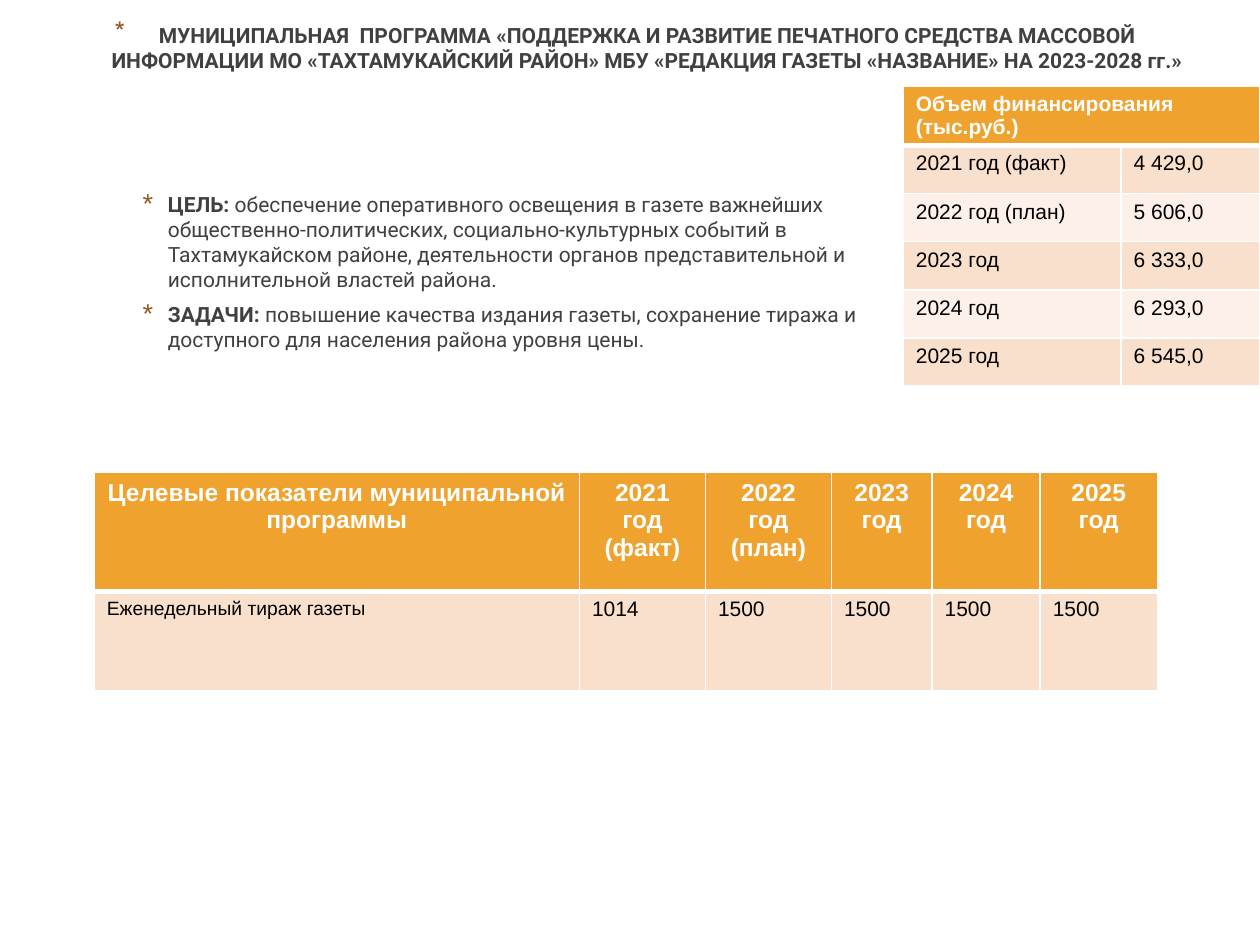
import pptx
import pptx.util
import pptx.dml.color
import pptx.enum.text
import lxml.etree

Cm, Pt = pptx.util.Cm, pptx.util.Pt
ALIGN = pptx.enum.text.PP_ALIGN
NS = "http://schemas.openxmlformats.org/drawingml/2006/main"
ORANGE, PEACH, CREAM = "F0A22E", "F9E0CD", "FCF0E8"


def tint(part, code):
    """Colour a font or a fill."""
    if hasattr(part, "solid"):
        part.solid()
        part.fore_color.rgb = pptx.dml.color.RGBColor.from_string(code)
    else:
        part.color.rgb = pptx.dml.color.RGBColor.from_string(code)


def add(xml, home, spot=None):
    """Put a DrawingML element into home."""
    node = lxml.etree.fromstring(xml.replace(" ", f' xmlns:a="{NS}" ', 1))
    home.insert(len(home) if spot is None else spot, node)


deck = pptx.Presentation()
deck.slide_width, deck.slide_height = Cm(25.4), Cm(19.05)
slide = deck.slides.add_slide(deck.slide_layouts[1])
head, body = slide.placeholders

# Title and body text
head.text_frame.text = (
    "МУНИЦИПАЛЬНАЯ  ПРОГРАММА «ПОДДЕРЖКА И РАЗВИТИЕ ПЕЧАТНОГО СРЕДСТВА "
    "МАССОВОЙ ИНФОРМАЦИИ МО «ТАХТАМУКАЙСКИЙ РАЙОН» МБУ «РЕДАКЦИЯ ГАЗЕТЫ "
    "«НАЗВАНИЕ» НА 2023-2028 гг.»")
goals = [
    ("ЦЕЛЬ:", " обеспечение оперативного освещения в газете важнейших "
     "общественно-политических, социально-культурных событий в Тахтамукайском "
     "районе, деятельности органов представительной и исполнительной властей "
     "района."),
    ("ЗАДАЧИ: ", "повышение качества издания газеты, сохранение тиража и "
     "доступного для населения района уровня цены."),
]
for n, pair in enumerate(goals):
    para = body.text_frame.paragraphs[0] if n == 0 else body.text_frame.add_paragraph()
    for text, bold in zip(pair, (True, False)):
        run = para.add_run()
        run.text, run.font.bold = text, bold

# Place, bullets and font of both placeholders
for box, place, left, hang, size, before, after in [
    (head, (0.71, 0.33, 23.8, 2.39), 0.89, 0.89, 128, 0, 0),
    (body, (2.49, 3.73, 15.6, 5.79), 0.64, 0.51, 130, 2.4, 3),
]:
    box.left, box.top, box.width, box.height = map(Cm, place)
    frame = box.text_frame
    frame.auto_size = pptx.enum.text.MSO_AUTO_SIZE.NONE
    frame.vertical_anchor = pptx.enum.text.MSO_ANCHOR.TOP
    for para in frame.paragraphs:
        para.alignment = ALIGN.CENTER if box is head else ALIGN.LEFT
        para.space_before, para.space_after = Pt(before), Pt(after)
        props = para._p.get_or_add_pPr()
        props.set("marL", str(Cm(left)))
        props.set("indent", str(-Cm(hang)))
        add('<a:buClr ><a:srgbClr val="91581F"/></a:buClr>', props)
        add(f'<a:buSzPct val="{size}000"/>', props)
        add('<a:buChar char="*"/>', props)
        para.font.name, para.font.size = "Roboto", Pt(12)
        tint(para.font, "404040")
        if box is head:
            para.font.bold = True

# Funding and target tables: place, columns, rows, header size, cells
years = ["2021 год (факт)", "2022 год (план)", "2023 год", "2024 год", "2025 год"]
sums = ["4 429,0", "5 606,0", "6 333,0", "6 293,0", "6 545,0"]
funds = [["Объем финансирования (тыс.руб.)", ""], *map(list, zip(years, sums))]
goal = [["Целевые показатели муниципальной программы", *years],
        ["Еженедельный тираж газеты", "1014"] + ["1500"] * 4]
for place, wide, high, size, cells in [
    ((18.21, 1.73), [4.39, 2.79], [1.2] + [0.97] * 5, 12, funds),
    ((1.9, 9.53), [9.78, 2.54, 2.54, 2.03, 2.18, 2.36], [2.39, 2.01], 14, goal),
]:
    table = slide.shapes.add_table(
        len(high), len(wide), *map(Cm, place), Cm(sum(wide)), Cm(sum(high))).table
    for col, width in zip(table.columns, wide):
        col.width = Cm(width)
    for row, height in zip(table.rows, high):
        row.height = Cm(height)
    if cells is funds:
        table.cell(0, 0).merge(table.cell(0, 1))
    for r, line in enumerate(cells):
        for c, text in enumerate(line):
            cell = table.cell(r, c)
            tint(cell.fill, ORANGE if r == 0 else PEACH if r % 2 else CREAM)
            # White borders, thicker around the header's lower edge
            props = cell._tc.get_or_add_tcPr()
            for n, side in enumerate("LRTB"):
                thick = (r, side) in ((0, "B"), (1, "T"))
                add(f'<a:ln{side} w="{Pt(3 if thick else 1)}"><a:solidFill>'
                    f'<a:srgbClr val="FFFFFF"/></a:solidFill></a:ln{side}>', props, n)
            if not text:
                continue
            cell.text = text
            para = cell.text_frame.paragraphs[0]
            if r == 0 and cells is goal:
                para.alignment = ALIGN.CENTER
            font = para.font
            font.name, font.bold = "Arial", r == 0
            small = 11 if cells is goal and c == 0 else 12
            font.size = Pt(size if r == 0 else small)
            tint(font, "FFFFFF" if r == 0 else "000000")

deck.save("out.pptx")
